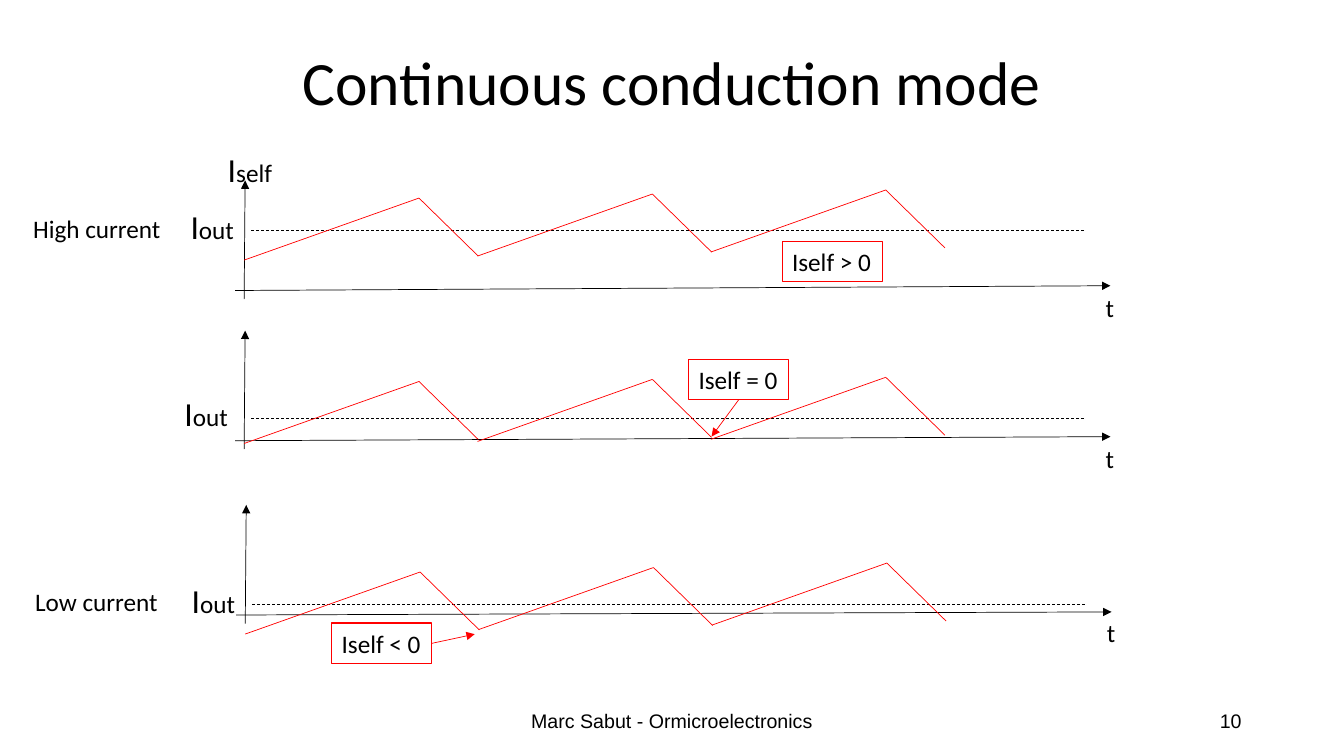
import dataclasses

import pptx
import pptx.util
from pptx.dml.color import RGBColor
from pptx.enum.dml import MSO_LINE
from pptx.enum.shapes import MSO_CONNECTOR, MSO_SHAPE
from pptx.enum.text import MSO_ANCHOR, MSO_AUTO_SIZE, PP_ALIGN
from pptx.oxml import parse_xml
from pptx.oxml.ns import nsdecls

Pt = pptx.util.Pt


@dataclasses.dataclass(frozen=True)
class Theme:
    ink: RGBColor = RGBColor(0, 0, 0)
    current: RGBColor = RGBColor(255, 0, 0)
    body_font: str = "Calibri"
    footer_font: str = "Arial"
    title_size: int = 44
    symbol_size: int = 24
    label_size: int = 18
    footer_size: int = 14
    line_width: float = 0.5
    callout_width: float = 0.75


THEME = Theme()
BOTTOM, RIGHT = 2, 3

# Offsets below are measured in points from the top of each vertical axis
AXIS_HEIGHT = 84.7
TOOTH_PITCH, TOOTH_COUNT = 166.7, 3
RISE_WIDTH, RISE_HEIGHT = 124.9, 44.3
FALL_WIDTH, FALL_HEIGHT = 42.3, 41.4

GRAPHS = [
    {"left": 174.4, "top": 128.9, "mean": 36, "start": 56.9, "drift": 2.9,
     "tilt": 3.4, "label_left": -45.4},
    {"left": 174.4, "top": 236.2, "mean": 62.6, "start": 80.6, "drift": 1.5,
     "tilt": 2.9, "label_left": -49.8},
    {"left": 175.2, "top": 360.7, "mean": 71.3, "start": 92.2, "drift": 3.2,
     "tilt": 2.2, "label_left": -45.4},
]

# Text, left, top, connection site and arrow tip
CALLOUTS = [
    ("Iself > 0", 558.7, 172.2, None, None),
    ("Iself = 0", 491.9, 256.5, BOTTOM, (508.3, 311.8)),
    ("Iself < 0", 237, 445, RIGHT, (339.1, 453)),
]


def apply_format(target, values):
    for name, value in values.items():
        setattr(target, name, value)


def write_text(shape, runs, font=THEME.body_font, align=PP_ALIGN.LEFT, **frame_format):
    apply_format(shape.text_frame, frame_format)
    paragraph = shape.text_frame.paragraphs[0]
    paragraph.alignment = align
    for text, size in runs:
        run = paragraph.add_run()
        run.text = text
        apply_format(run.font, {"name": font, "size": Pt(size)})
        run.font.color.rgb = THEME.ink
    return paragraph


def add_label(slide, runs, left, top, width, height):
    box = slide.shapes.add_textbox(Pt(left), Pt(top), Pt(width), Pt(height))
    write_text(box, runs, word_wrap=False, auto_size=MSO_AUTO_SIZE.SHAPE_TO_FIT_TEXT)


def add_line(shapes, start, end, color=THEME.ink, arrow=False, dash=None):
    line = shapes.add_connector(MSO_CONNECTOR.STRAIGHT, *map(Pt, start + end))
    apply_format(line.line, {"width": Pt(THEME.line_width), "dash_style": dash})
    line.line.color.rgb = color
    properties = line._element.spPr
    if arrow:
        properties.find(pptx.oxml.ns.qn("a:ln")).append(
            parse_xml(f'<a:tailEnd {nsdecls("a")} type="triangle"/>'))
    properties.append(parse_xml(f'<a:effectLst {nsdecls("a")}/>'))
    return line


def add_title(slide, left, top, width, height):
    title = slide.shapes.title
    apply_format(title, {"left": Pt(left), "top": Pt(top),
                         "width": Pt(width), "height": Pt(height)})
    paragraph = write_text(title, [("Continuous conduction mode", THEME.title_size)],
                           align=PP_ALIGN.CENTER, vertical_anchor=MSO_ANCHOR.MIDDLE)
    paragraph.line_spacing = 0.9


def add_footer(slide, text, align, left, top, width, height):
    box = slide.shapes.add_textbox(Pt(left), Pt(top), Pt(width), Pt(height))
    write_text(box, [(text, THEME.footer_size)], THEME.footer_font, align,
               word_wrap=True, vertical_anchor=MSO_ANCHOR.MIDDLE)


def add_sawtooth(slide, left, top, drift):
    for index in range(TOOTH_COUNT):
        tooth = slide.shapes.add_group_shape()
        x, y = left + index * TOOTH_PITCH, top - index * drift
        peak = (x + RISE_WIDTH, y - RISE_HEIGHT)
        valley = (peak[0] + FALL_WIDTH, peak[1] + FALL_HEIGHT)
        add_line(tooth.shapes, (x, y), peak, THEME.current)
        add_line(tooth.shapes, peak, valley, THEME.current)


def add_graph(slide, left, top, mean, start, drift, tilt, label_left):
    # Axes
    add_line(slide.shapes, (left, top + AXIS_HEIGHT), (left + 0.7, top), arrow=True)
    axis_y = top + 78.6
    add_line(slide.shapes, (left - 6.5, axis_y), (left + 618.8, axis_y - tilt), arrow=True)
    add_label(slide, [("t", THEME.label_size)], left + 608.3, top + 76.6, 20.9, 29)
    # Mean output current
    add_line(slide.shapes, (left + 5, top + mean), (left + 601, top + mean),
             dash=MSO_LINE.DASH)
    add_label(slide, [("I", THEME.symbol_size), ("out", THEME.label_size)],
              left + label_left, top + mean - 21.5, 46, 34)
    # Inductor current
    add_sawtooth(slide, left, top + start, drift)


def add_callout(slide, text, left, top, site, tip):
    box = slide.shapes.add_shape(MSO_SHAPE.RECTANGLE, Pt(left), Pt(top), Pt(71.6), Pt(29))
    box.shadow.inherit = False
    box.fill.background()
    box.line.color.rgb = THEME.current
    box.line.width = Pt(THEME.callout_width)
    write_text(box, [(text, THEME.label_size)], word_wrap=False,
               auto_size=MSO_AUTO_SIZE.SHAPE_TO_FIT_TEXT, vertical_anchor=MSO_ANCHOR.TOP)
    if tip:
        arrow = add_line(slide.shapes, (left, top), tip, THEME.current, arrow=True)
        arrow.begin_connect(box, site)


def main():
    presentation = pptx.Presentation()
    apply_format(presentation, {"slide_width": Pt(960), "slide_height": Pt(540)})
    slide = presentation.slides.add_slide(presentation.slide_layouts[5])

    add_title(slide, 66, 28.8, 828, 64)
    for graph in GRAPHS:
        add_graph(slide, **graph)

    # Vertical axis and row labels
    add_label(slide, [("I", THEME.symbol_size), ("self", THEME.label_size)],
              155.6, 103, 46.8, 34)
    add_label(slide, [("High current", THEME.label_size)], 16.6, 149, 106.6, 29)
    add_label(slide, [("Low current", THEME.label_size)], 18, 415.6, 103, 29)

    for callout in CALLOUTS:
        add_callout(slide, *callout)

    add_footer(slide, "Marc Sabut - Ormicroelectronics", PP_ALIGN.CENTER, 318, 500.5, 324, 28.8)
    add_footer(slide, "10", PP_ALIGN.RIGHT, 678, 500.5, 216, 28.8)
    presentation.save("out.pptx")


if __name__ == "__main__":
    main()
